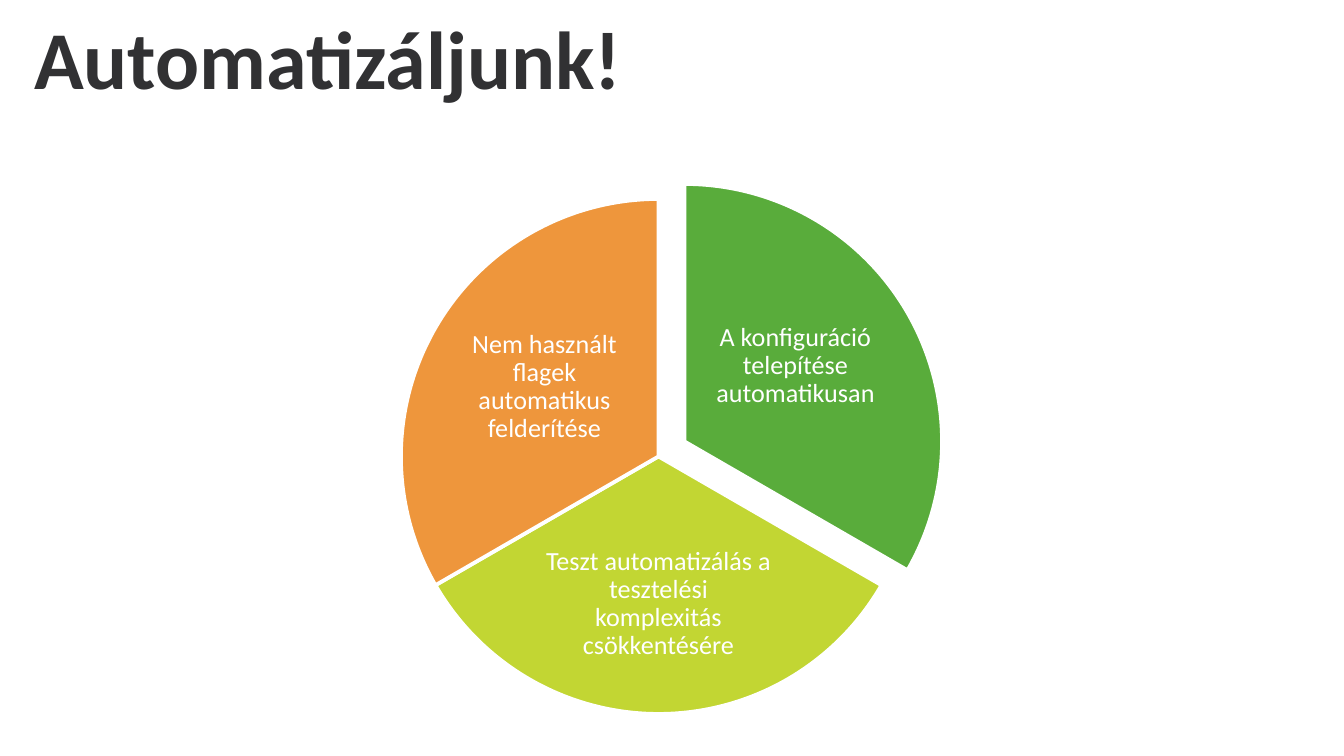
from pptx import Presentation
from pptx.dml.color import RGBColor
from pptx.enum.shapes import MSO_SHAPE
from pptx.enum.text import MSO_ANCHOR, PP_ALIGN
from pptx.util import Pt

EMU_PER_PX = 914400 / 134.4
DIAMETER = 515
WHITE = "FFFFFF"

# start angle, wedge position, colour, label box, label
WEDGES = [
    (270, (427, 184), "59AC3B", (708, 280, 175, 172),
     "A konfiguráció telepítése automatikusan"),
    (30, (401, 199), "C2D633", (542, 524, 233, 160),
     "Teszt automatizálás a tesztelési komplexitás csökkentésére"),
    (150, (401, 199), "EE963C", (457, 301, 175, 172),
     "Nem használt flagek automatikus felderítése"),
]
SWEEP = 360 // len(WEDGES)


def px(*lengths):
    return [round(n * EMU_PER_PX) for n in lengths]


def color(value):
    return RGBColor.from_string(value)


def set_attrs(obj, values):
    for name, value in values.items():
        setattr(obj, name, value)


def write(sp, text, margin, anchor, para, font, font_color):
    tf = sp.text_frame
    inset = px(margin)[0]
    sides = ("left", "top", "right", "bottom")
    set_attrs(tf, {f"margin_{side}": inset for side in sides})
    set_attrs(tf, {"word_wrap": True, "vertical_anchor": anchor})
    p = tf.paragraphs[0]
    set_attrs(p, para)
    r = p.add_run()
    r.text = text
    set_attrs(r.font, {"name": "Calibri", **font})
    r.font.color.rgb = color(font_color)


def add_title(s, text):
    sp = s.shapes.title
    left, top, width, height = px(34, 26, 1282, 82)
    set_attrs(sp, {"left": left, "top": top, "width": width, "height": height})
    write(sp, text, 0, MSO_ANCHOR.TOP,
          {"alignment": PP_ALIGN.LEFT, "line_spacing": 0.8},
          {"size": Pt(44), "bold": True}, "313133")


def add_wedge(s, start, position, fill):
    sp = s.shapes.add_shape(MSO_SHAPE.PIE, *px(*position, DIAMETER, DIAMETER))
    # Angles are stored in 1/60000 degree, adjustments in 1/100000
    sp.adjustments[0] = start * 0.6
    sp.adjustments[1] = (start + SWEEP) % 360 * 0.6
    sp.shadow.inherit = False
    sp.fill.solid()
    sp.fill.fore_color.rgb = color(fill)
    sp.line.color.rgb = color(WHITE)
    sp.line.width = Pt(2)


def add_label(s, box, text):
    sp = s.shapes.add_textbox(*px(*box))
    write(sp, text, 3, MSO_ANCHOR.MIDDLE,
          {"alignment": PP_ALIGN.CENTER, "line_spacing": 0.9,
           "space_after": Pt(5)},
          {"size": Pt(14)}, WHITE)


def main():
    prs = Presentation()
    prs.slide_width, prs.slide_height = px(1344, 756)
    s = prs.slides.add_slide(prs.slide_layouts[5])
    add_title(s, "Automatizáljunk!")
    for start, position, fill, box, text in WEDGES:
        add_wedge(s, start, position, fill)
        add_label(s, box, text)
    prs.save("out.pptx")


if __name__ == "__main__":
    main()
